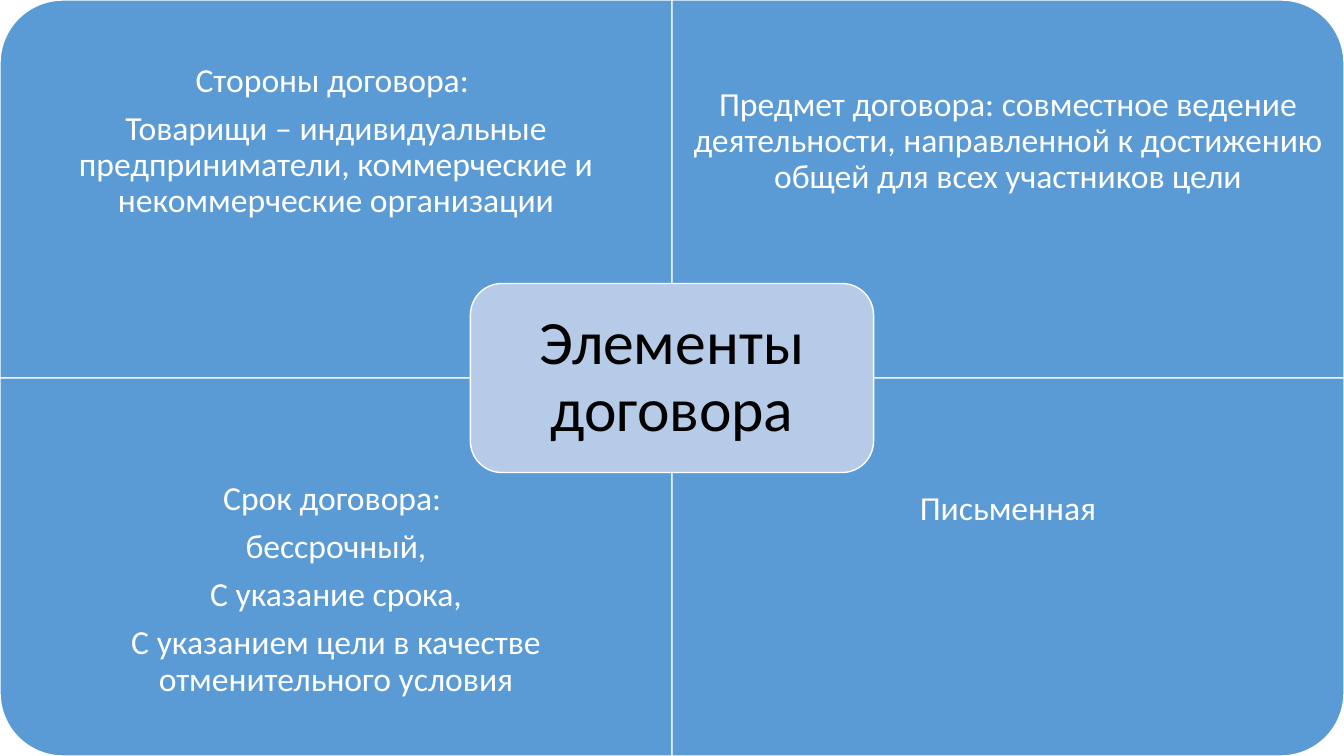
"""Build a slide with four quadrants of contract elements around a central title."""
import pptx
import pptx.util
import pptx.dml.color
import pptx.enum.shapes
import pptx.enum.text

Inches, Pt = pptx.util.Inches, pptx.util.Pt
Color = pptx.dml.color.RGBColor.from_string
Shape = pptx.enum.shapes.MSO_SHAPE
Anchor = pptx.enum.text.MSO_ANCHOR
theme = {"font": "Calibri", "tile": "5B9BD5", "hub": "B5CBE7", "line": "FFFFFF",
         "light": "FFFFFF", "dark": "000000", "body": 24, "title": 44}

deck = pptx.Presentation()
deck.slide_width, deck.slide_height = Inches(13.33), Inches(7.5)
wide, high = deck.slide_width, deck.slide_height
slide = deck.slides.add_slide(deck.slide_layouts[5])
shapes = slide.shapes


def draw(kind, box, fill, turn=0):
    form = shapes.add_shape(kind, *map(int, box))
    form.rotation = turn
    form.shadow.inherit = False
    form.fill.solid()
    form.fill.fore_color.rgb = Color(theme[fill])
    form.line.color.rgb = Color(theme["line"])
    form.line.width = Pt(1)


def write(frame, lines, size, color, inset, anchor=Anchor.MIDDLE):
    frame.word_wrap = True
    frame.auto_size = pptx.enum.text.MSO_AUTO_SIZE.NONE
    frame.vertical_anchor = anchor
    frame.margin_left = frame.margin_right = Inches(inset)
    frame.margin_top = frame.margin_bottom = Inches(inset)
    frame.text = "\n".join(lines)
    for para in frame.paragraphs:
        para.alignment = pptx.enum.text.PP_ALIGN.CENTER
        para.line_spacing = 0.9
        para.space_after = Pt(0.35 * theme[size])
        para.font.name = theme["font"]
        para.font.size = Pt(theme[size])
        para.font.color.rgb = Color(theme[color])


tiles = [
    (0, 0, 270, Anchor.MIDDLE, 0,
     ["Стороны договора: ",
      "Товарищи – индивидуальные предприниматели, коммерческие и некоммерческие организации"]),
    (1, 0, 0, Anchor.MIDDLE, 0,
     ["Предмет договора: совместное ведение деятельности, направленной к достижению "
      "общей для всех участников цели"]),
    (0, 1, 180, Anchor.MIDDLE, 0.48,
     ["Срок договора: ", "бессрочный,", "С указание срока,",
      "С указанием цели в качестве отменительного условия"]),
    (1, 1, 90, Anchor.TOP, 0, ["Письменная"]),
]
cell = wide / 2, high / 2
for col, row, turn, anchor, lift, lines in tiles:
    left, top = col * cell[0], row * cell[1]
    size = cell[::-1] if turn % 180 else cell
    start = left + (cell[0] - size[0]) / 2, top + (cell[1] - size[1]) / 2
    draw(Shape.ROUND_1_RECTANGLE, start + size, "tile", turn)
    box = left, row * high * 5 / 8, cell[0], high * 3 / 8
    text = shapes.add_textbox(*map(int, box)).text_frame
    write(text, lines, "body", "light", 0.19, anchor)
    text.margin_bottom += Inches(lift)

hub = wide * 0.35, high * 3 / 8, wide * 0.3, high / 4
draw(Shape.ROUNDED_RECTANGLE, hub, "hub")
title = shapes.title
pad = Inches(0.09)
title.left, title.top = int(hub[0] + pad), int(hub[1] + pad)
title.width, title.height = int(hub[2] - 2 * pad), int(hub[3] - 2 * pad)
write(title.text_frame, ["Элементы договора"], "title", "dark", 0.18)
title.element.getparent().append(title.element)

deck.save("out.pptx")
